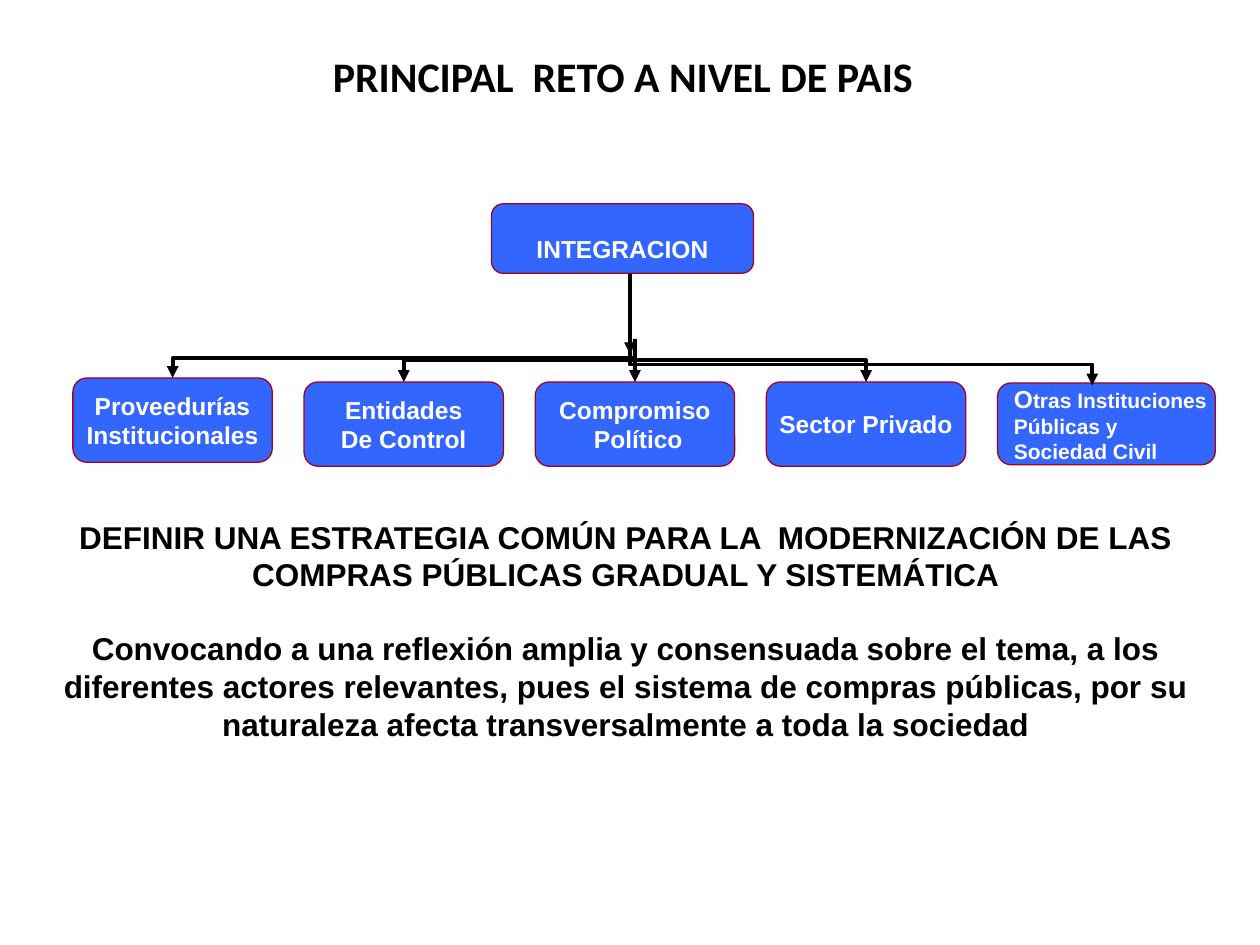
"""Build the slide on integration as the main national challenge."""
from lxml.etree import SubElement
from pptx import Presentation
from pptx.dml.color import RGBColor
from pptx.enum.shapes import MSO_CONNECTOR as Link, MSO_SHAPE as Preset
from pptx.enum.text import MSO_ANCHOR as Anchor, PP_ALIGN as Align
from pptx.oxml import parse_xml
from pptx.oxml.ns import nsdecls, qn
from pptx.util import Cm, Pt

COLORS = {"box": "3366FF", "border": "A50021", "light": "FFFFFF",
          "dark": "000000", "shadow": "EEECE1"}
TITLE = "PRINCIPAL  RETO A NIVEL DE PAIS"
ROOT = "INTEGRACION"
ACTORS = [
    (["Proveedurías", "Institucionales"], 7.62, 4.02, 1.7),
    (["Entidades", "De Control"], 7.7, 4.02, 1.7),
    (["Compromiso", " Político"], 7.7, 4.02, 1.7),
    (["Sector Privado"], 7.7, 4.02, 1.7),
    ([[("O", 14), ("tras Instituciones", 12)], [("Públicas y ", 12)],
      [("Sociedad Civil", 12)]], 7.72, 4.39, 1.65),
]
STRATEGY = [
    "DEFINIR UNA ESTRATEGIA COMÚN PARA LA  MODERNIZACIÓN DE LAS COMPRAS "
    "PÚBLICAS GRADUAL Y SISTEMÁTICA",
    "Convocando a una reflexión amplia y consensuada sobre el tema, a los "
    "diferentes actores relevantes, pues el sistema de compras públicas, por "
    "su naturaleza afecta transversalmente a toda la sociedad",
]
FIRST_LEFT, PITCH = 1.47, 4.66
HUB = (12.8, 6.83)
BRANCHES = [(1, *HUB, 7.7), (-1, *HUB, 7.7), (-2, *HUB, 7.62),
            (2, 12.7, 6.93, 7.77)]


def rgb(role):
    return RGBColor.from_string(COLORS[role])


def write(shape, lines, size, role, font="Arial", align=Align.CENTER, gap=0,
          **frame_format):
    frame = shape.text_frame
    for name, value in frame_format.items():
        setattr(frame, name, value)
    for index, line in enumerate(lines):
        paragraph = frame.add_paragraph() if index else frame.paragraphs[0]
        paragraph.alignment = align
        if index and gap:
            paragraph.space_before = Pt(gap)
        for text, points in [(line, size)] if isinstance(line, str) else line:
            run = paragraph.add_run()
            run.text = text
            font_format = {"size": Pt(points), "name": font, "bold": True}
            for name, value in font_format.items():
                setattr(run.font, name, value)
            run.font.color.rgb = rgb(role)


def add_box(shapes, place, lines, **text_format):
    box = shapes.add_shape(Preset.ROUNDED_RECTANGLE, *map(Cm, place))
    box.shadow.inherit = False
    box.fill.solid()
    box.fill.fore_color.rgb = rgb("box")
    box.line.color.rgb = rgb("border")
    box.line.width = Pt(0.75)
    write(box, lines, 14, "light", word_wrap=False, **text_format)
    return box


def add_arrow(shapes, kind, *ends):
    arrow = shapes.add_connector(kind, *map(Cm, ends))
    arrow.line.color.rgb = rgb("dark")
    arrow.line.width = Pt(2.25)
    properties = arrow.element.spPr
    SubElement(properties.find(qn("a:ln")), qn("a:tailEnd"), type="triangle")
    SubElement(properties, qn("a:effectLst"))
    return arrow


def add_branch(shapes, columns, x, y, end_y):
    drop, reach = end_y - y, columns * PITCH
    center_x, center_y = x + reach / 2, y + drop / 2
    side = 1 if columns < 0 else -1
    branch = add_arrow(shapes, Link.ELBOW,
                       center_x - side * drop / 2, center_y - abs(reach) / 2,
                       center_x + side * drop / 2, center_y + abs(reach) / 2)
    turn = 90 if columns < 0 else 270
    branch.element.spPr.find(qn("a:xfrm")).set("rot", str(turn * 60000))


def main():
    deck = Presentation()
    deck.slide_width, deck.slide_height = Cm(25.4), Cm(19.05)
    shapes = deck.slides.add_slide(deck.slide_layouts[6]).shapes

    title = shapes.add_textbox(*map(Cm, (4.62, 0.91, 15.88, 1.24)))
    write(title, [TITLE], 24, "dark", font="Calibri", word_wrap=True,
          vertical_anchor=Anchor.MIDDLE)
    title_run = title.text_frame.paragraphs[0].runs[0]
    title_run.font.fill._xPr.find(qn("a:solidFill")).addnext(parse_xml(
        f'<a:effectLst {nsdecls("a")}><a:outerShdw dist="38100" dir="2700000">'
        f'<a:srgbClr val="{COLORS["shadow"]}"/></a:outerShdw></a:effectLst>'))

    boxes = []
    for column, (lines, top, width, height) in enumerate(ACTORS):
        align = Align.CENTER if isinstance(lines[0], str) else Align.JUSTIFY
        place = (FIRST_LEFT + column * PITCH, top, width, height)
        boxes.append(add_box(shapes, place, lines, align=align,
                             vertical_anchor=Anchor.MIDDLE))
    add_box(shapes, (9.91, 4.11, 5.28, 1.4), [ROOT],
            vertical_anchor=Anchor.BOTTOM)

    center_arrow = add_arrow(shapes, Link.STRAIGHT, *HUB, HUB[0], 7.7)
    center_arrow.end_connect(boxes[2], 0)
    for branch in BRANCHES:
        add_branch(shapes, *branch)
    add_arrow(shapes, Link.STRAIGHT, 12.7, 5.53, 12.7, 7.14)

    strategy = shapes.add_textbox(*map(Cm, (0.51, 10.31, 24.21, 7.87)))
    write(strategy, STRATEGY, 18, "dark", gap=20.7, word_wrap=True)
    deck.save("out.pptx")


if __name__ == "__main__":
    main()
